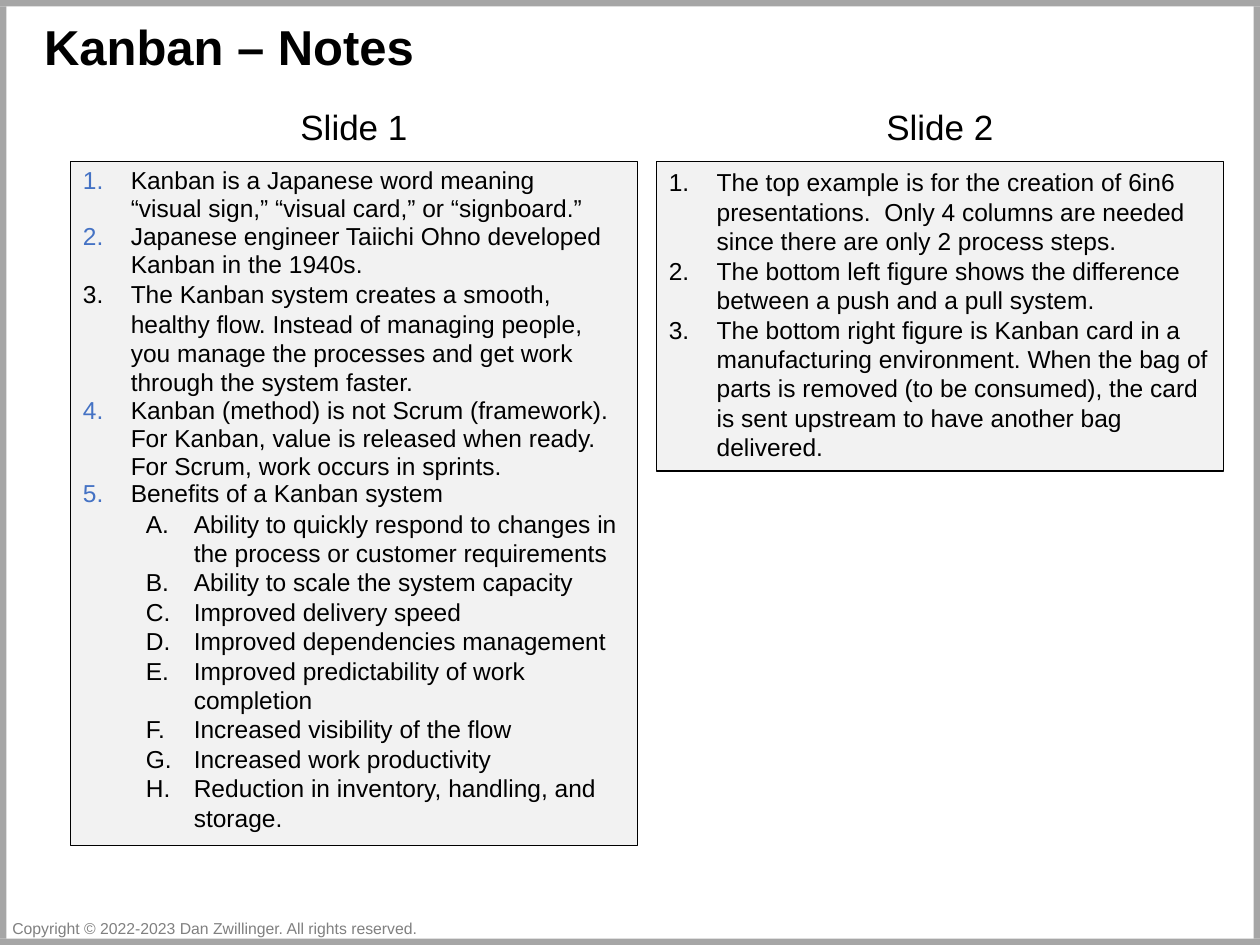
from lxml import etree
from pptx import Presentation
from pptx.dml.color import RGBColor
from pptx.enum.shapes import MSO_SHAPE
from pptx.enum.text import MSO_ANCHOR, MSO_AUTO_SIZE, PP_ALIGN
from pptx.oxml.ns import qn
from pptx.util import Inches, Pt

RECTANGLE = MSO_SHAPE.RECTANGLE
TOP, MIDDLE = MSO_ANCHOR.TOP, MSO_ANCHOR.MIDDLE
NO_FIT = MSO_AUTO_SIZE.NONE
LEFT, CENTER = PP_ALIGN.LEFT, PP_ALIGN.CENTER

BLACK = RGBColor(0x00, 0x00, 0x00)
BORDER_GRAY = RGBColor(0xA6, 0xA6, 0xA6)
PANEL_GRAY = RGBColor(0xF2, 0xF2, 0xF2)
COPYRIGHT_GRAY = RGBColor(0x80, 0x80, 0x80)
NUMBER_BLUE = RGBColor(0x44, 0x72, 0xC4)

WIDTH, HEIGHT = 10, 7.5
BORDER = 0.05
COLUMN_LEFT, COLUMN_WIDTH, COLUMN_STEP = 0.56, 4.5, 4.65
HEADING_TOP, HEADING_HEIGHT, PANEL_TOP = 0.79, 0.44, 1.28
HANGING, LEVEL_STEP = 0.38, 0.5

# Each note: level, whether its number is blue (and its lines tighter), text lines.
SLIDE_1_NOTES = [
    (0, True, ["Kanban is a Japanese word meaning", "“visual sign,” “visual card,” or “signboard.”"]),
    (0, True, ["Japanese engineer Taiichi Ohno developed Kanban in the 1940s."]),
    (0, False, ["The Kanban system creates a smooth, healthy flow. Instead of managing people, "
                "you manage the processes and get work through the system faster."]),
    (0, True, ["Kanban (method) is not Scrum (framework). For Kanban, value is released when "
               "ready. For Scrum, work occurs in sprints."]),
    (0, True, ["Benefits of a Kanban system"]),
    (1, False, ["Ability to quickly respond to changes in the process or customer requirements"]),
    (1, False, ["Ability to scale the system capacity"]),
    (1, False, ["Improved delivery speed"]),
    (1, False, ["Improved dependencies management"]),
    (1, False, ["Improved predictability of work completion"]),
    (1, False, ["Increased visibility of the flow"]),
    (1, False, ["Increased work productivity"]),
    (1, False, ["Reduction in inventory, handling, and storage."]),
]
SLIDE_2_NOTES = [
    (0, False, ["The top example is for the creation of 6in6 presentations.  Only 4 columns are "
                "needed since there are only 2 process steps."]),
    (0, False, ["The bottom left figure shows the difference between a push and a pull system."]),
    (0, False, ["The bottom right figure is Kanban card in a manufacturing environment. When the "
                "bag of parts is removed (to be consumed), the card is sent upstream to have "
                "another bag delivered."]),
]
COLUMNS = [("Slide 1", 5.43, SLIDE_1_NOTES), ("Slide 2", 2.46, SLIDE_2_NOTES)]


def add_text(paragraph, text, size, color=BLACK, bold=False):
    run = paragraph.add_run()
    run.text = text
    run.font.name = "Arial"
    run.font.size = Pt(size)
    run.font.bold = bold
    run.font.color.rgb = color


def number_paragraph(paragraph, level, is_blue):
    """Give a paragraph a hanging automatic number: 1. at level 0, A. at level 1."""
    paragraph.level = level
    paragraph.alignment = LEFT
    paragraph.line_spacing = 0.95 if is_blue else 1.0
    properties = paragraph._p.get_or_add_pPr()
    properties.set("marL", str(Inches(HANGING + level * LEVEL_STEP)))
    properties.set("indent", str(-Inches(HANGING)))
    if is_blue:
        number_color = etree.SubElement(properties, qn("a:buClr"))
        etree.SubElement(number_color, qn("a:srgbClr"), val=str(NUMBER_BLUE))
    scheme = "alphaUcPeriod" if level else "arabicPeriod"
    etree.SubElement(properties, qn("a:buFont"), typeface="+mj-lt")
    etree.SubElement(properties, qn("a:buAutoNum"), type=scheme)


presentation = Presentation()
presentation.slide_width = Inches(WIDTH)
presentation.slide_height = Inches(HEIGHT)
slide = presentation.slides.add_slide(presentation.slide_layouts[5])
shapes = slide.shapes

# Border strips: top, bottom, left, right
side_height = HEIGHT - 2 * BORDER
for box in [
    (0, 0, WIDTH, BORDER),
    (0, HEIGHT - BORDER, WIDTH, BORDER),
    (0, BORDER, BORDER, side_height),
    (WIDTH - BORDER, BORDER, BORDER, side_height),
]:
    strip = shapes.add_shape(RECTANGLE, *map(Inches, box))
    strip.shadow.inherit = False
    strip.fill.solid()
    strip.fill.fore_color.rgb = BORDER_GRAY
    strip.line.fill.background()

# Title
title = shapes.title
title.left, title.top, title.width, title.height = map(Inches, (0.25, 0.08, 7.88, 0.57))
title.text_frame.auto_size = NO_FIT
title.text_frame.vertical_anchor = MIDDLE
title_paragraph = title.text_frame.paragraphs[0]
title_paragraph.alignment = LEFT
add_text(title_paragraph, "Kanban – Notes", 28, bold=True)

# Two columns, each a heading above a panel of numbered notes
for column, (heading, panel_height, notes) in enumerate(COLUMNS):
    left = Inches(COLUMN_LEFT + column * COLUMN_STEP)
    width = Inches(COLUMN_WIDTH)
    heading_box = shapes.add_textbox(left, Inches(HEADING_TOP), width, Inches(HEADING_HEIGHT))
    heading_box.text_frame.word_wrap = True
    heading_paragraph = heading_box.text_frame.paragraphs[0]
    heading_paragraph.alignment = CENTER
    add_text(heading_paragraph, heading, 20)

    panel = shapes.add_shape(RECTANGLE, left, Inches(PANEL_TOP), width, Inches(panel_height))
    panel.shadow.inherit = False
    panel.fill.solid()
    panel.fill.fore_color.rgb = PANEL_GRAY
    panel.line.color.rgb = BLACK
    panel.line.width = Pt(0.75)
    frame = panel.text_frame
    frame.word_wrap = True
    frame.vertical_anchor = TOP
    for index, (level, is_blue, lines) in enumerate(notes):
        paragraph = frame.add_paragraph() if index else frame.paragraphs[0]
        number_paragraph(paragraph, level, is_blue)
        for line_index, line in enumerate(lines):
            if line_index:
                paragraph.add_line_break()
            add_text(paragraph, line, 14)

# Copyright line
copyright_box = shapes.add_textbox(0, Inches(7.24), Inches(3.46), Inches(0.25))
copyright_box.text_frame.word_wrap = False
add_text(copyright_box.text_frame.paragraphs[0],
         "Copyright © 2022-2023 Dan Zwillinger. All rights reserved.", 9, COPYRIGHT_GRAY)

presentation.save("out.pptx")
